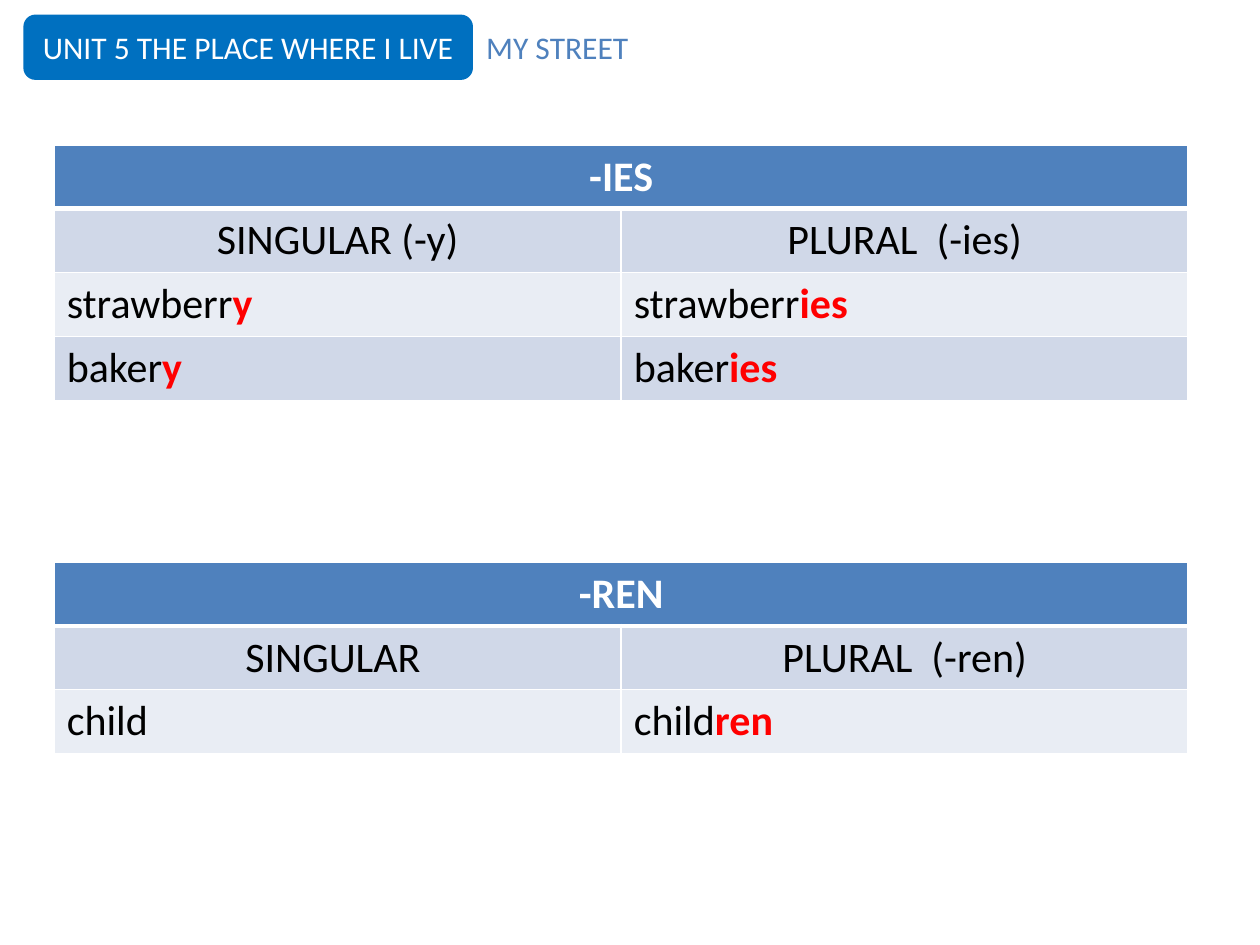
from lxml.etree import SubElement
from pptx import Presentation
from pptx.dml.color import RGBColor
from pptx.enum.shapes import MSO_SHAPE as Shape
from pptx.enum.text import MSO_ANCHOR as Anchor, PP_ALIGN as Align
from pptx.oxml.ns import qn
from pptx.util import Inches, Pt

WHITE, BLACK, RED = "FFFFFF", "000000", "FF0000"
HEADER_BLUE, UNIT_BLUE = "4F81BD", "0070C0"
BANDS = ("D0D8E8", "E9EDF4")
ROW_HEIGHT = 0.5


def color(value):
    """Return the colour for a hex string."""
    return RGBColor.from_string(value)


def add_span(para, text, hex_color, **formats):
    """Add a run in Calibri with the given font values."""
    span = para.add_run()
    span.text = text
    span.font.color.rgb = color(hex_color)
    for name, value in {"name": "Calibri", **formats}.items():
        setattr(span.font, name, value)


def add_borders(cell, top=1, bottom=1):
    """Draw white borders of the given point widths around a cell."""
    properties = cell._tc.get_or_add_tcPr()
    for side, width in {"L": 1, "R": 1, "T": top, "B": bottom}.items():
        line = SubElement(properties, qn(f"a:ln{side}"), w=str(Pt(width)))
        fill = SubElement(line, qn("a:solidFill"))
        SubElement(fill, qn("a:srgbClr"), val=WHITE)


def add_label(box, text, hex_color, align):
    """Write one centred-in-height line of heading text in a shape."""
    frame = box.text_frame
    frame.word_wrap = True
    frame.vertical_anchor = Anchor.MIDDLE
    para = frame.paragraphs[0]
    para.alignment = align
    add_span(para, text, hex_color, size=Pt(18))


def add_heading(page, left, top, height, unit, topic):
    """Place the unit badge and the topic beside it."""
    topic_box = page.shapes.add_textbox(
        Inches(left + 3.56), Inches(top), Inches(1.85), Inches(height))
    add_label(topic_box, topic, HEADER_BLUE, Align.LEFT)
    badge = page.shapes.add_shape(
        Shape.ROUNDED_RECTANGLE, Inches(left), Inches(top), Inches(3.54), Inches(height))
    badge.shadow.inherit = False
    badge.fill.solid()
    badge.fill.fore_color.rgb = color(UNIT_BLUE)
    badge.line.color.rgb = color(UNIT_BLUE)
    badge.line.width = Pt(2)
    add_label(badge, unit, WHITE, Align.CENTER)


def add_plural_table(page, left, top, width, title, labels, words):
    """Place a table of singular and plural words with red endings."""
    rows = [[(title, "")] * 2, [(label, "") for label in labels], *words]
    table = page.shapes.add_table(
        len(rows), 2, Inches(left), Inches(top),
        Inches(width), Inches(ROW_HEIGHT * len(rows))).table
    table.cell(0, 0).merge(table.cell(0, 1))
    for r, row in enumerate(rows):
        for c, (stem, ending) in enumerate(row):
            cell = table.cell(r, c)
            add_borders(cell, top=3 if r == 1 else 1, bottom=3 if r == 0 else 1)
            cell.fill.solid()
            cell.fill.fore_color.rgb = color(BANDS[(r - 1) % 2] if r else HEADER_BLUE)
            if cell.is_spanned:
                continue
            para = cell.text_frame.paragraphs[0]
            para.alignment = Align.CENTER if r < 2 else Align.LEFT
            add_span(para, stem, BLACK if r else WHITE, size=Pt(24), bold=r == 0)
            if ending:
                add_span(para, ending, RED, size=Pt(24), bold=True)


def main():
    """Build the slide and save the deck."""
    deck = Presentation()
    deck.slide_width, deck.slide_height = Inches(10), Inches(7.5)
    page = deck.slides.add_slide(deck.slide_layouts[6])
    add_plural_table(
        page, 0.43, 1.15, 9, "-IES", ("SINGULAR (-y)", "PLURAL  (-ies)"),
        [[(stem, "y"), (stem, "ies")] for stem in ("strawberr", "baker")])
    add_plural_table(
        page, 0.43, 4.46, 9, "-REN", ("SINGULAR ", "PLURAL  (-ren)"),
        [[("child", ""), ("child", "ren")]])
    add_heading(page, 0.2, 0.13, 0.49, "UNIT 5 THE PLACE WHERE I LIVE", "MY STREET")
    deck.save("out.pptx")


if __name__ == "__main__":
    main()
